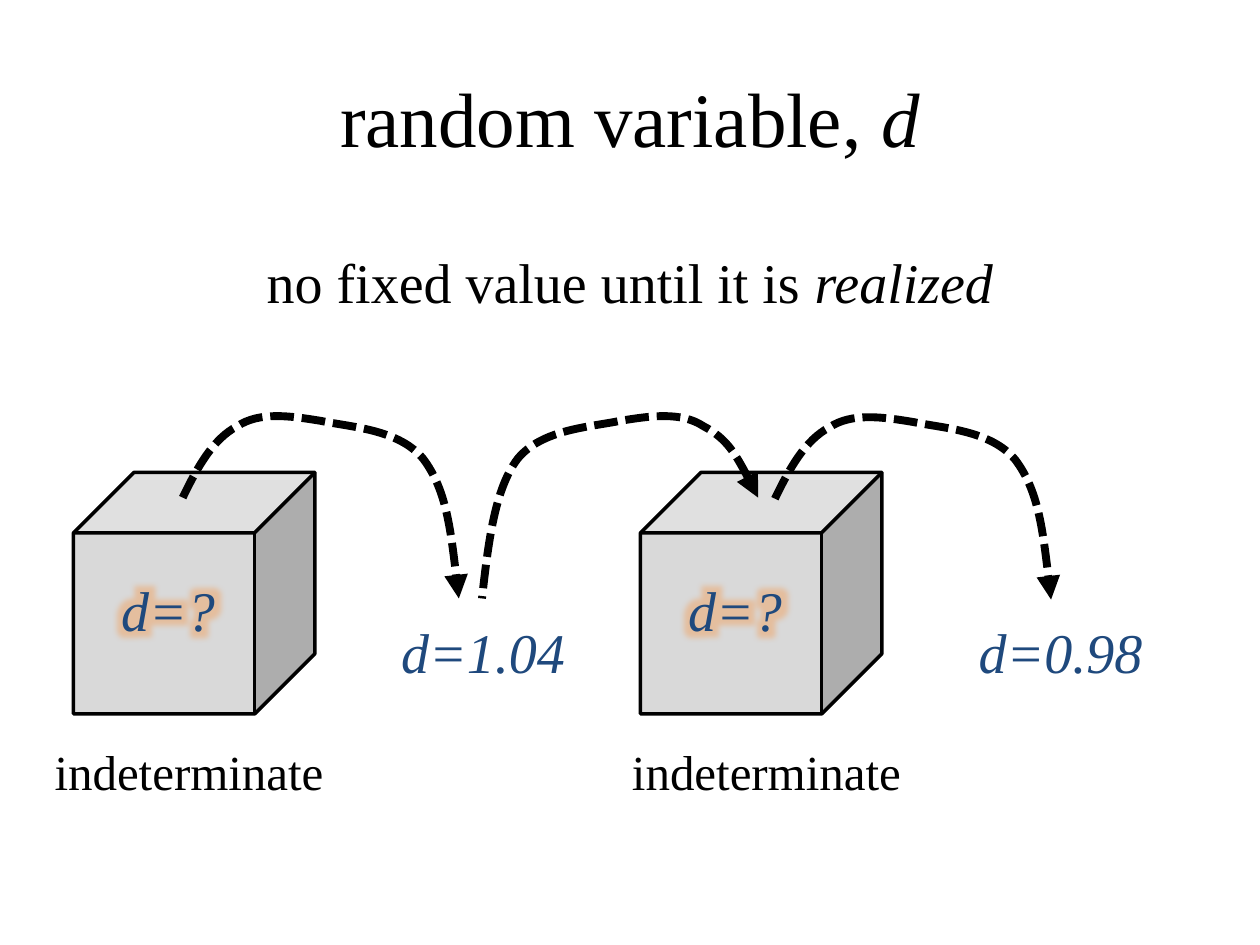
import dataclasses

import lxml.etree
import pptx
import pptx.dml.color
import pptx.enum.dml
import pptx.enum.shapes
import pptx.enum.text
import pptx.oxml.ns
import pptx.util

PX = 914400 // 120
HOP = [
    (14, -29), (29, -56), (52, -68),
    (73, -82), (102, -78), (132, -73),
    (161, -67), (206, -65), (229, -37),
    (251, -8), (257, 43), (263, 96),
]
MIDDLE = pptx.enum.text.MSO_ANCHOR.MIDDLE
TOP = pptx.enum.text.MSO_ANCHOR.TOP


@dataclasses.dataclass(frozen=True)
class Theme:
    font: str = "Times New Roman"
    ink: str = "000000"
    value: str = "1F497D"
    cube: str = "D9D9D9"
    glow: str = "F79646"
    title_size: int = 44
    body_size: int = 32
    caption_size: int = 28
    cube_line: int = 2
    hop_line: float = 4.5


THEME = Theme()


def px(*lengths):
    return [length * PX for length in lengths]


def rgb(color):
    return pptx.dml.color.RGBColor.from_string(color)


def add_xml(parent, tag, **attributes):
    return lxml.etree.SubElement(parent, pptx.oxml.ns.qn(tag), attributes)


def write(box, spans, size, color, anchor, space=0):
    frame = box.text_frame
    frame.word_wrap = True
    frame.vertical_anchor = anchor
    para = frame.paragraphs[0]
    para.alignment = pptx.enum.text.PP_ALIGN.CENTER
    para.space_before = pptx.util.Pt(space)
    para.font.name = THEME.font
    para.font.size = pptx.util.Pt(size)
    para.font.color.rgb = rgb(color)
    for text, italic in spans:
        span = para.add_run()
        span.text = text
        span.font.italic = italic
    return para


def add_title(page, spans):
    title = page.shapes.title
    title.left, title.top, title.width, title.height = px(60, 36, 1080, 150)
    write(title, spans, THEME.title_size, THEME.ink, MIDDLE)


def add_note(page, place, spans, size, space):
    box = page.shapes.add_textbox(*px(*place))
    write(box, spans, size, THEME.ink, TOP, space)


def add_value(page, place, text):
    box = page.shapes.add_textbox(*px(*place))
    return write(box, [(text, True)], THEME.body_size, THEME.value, MIDDLE)


def add_glow(para):
    for span in para.runs:
        effects = add_xml(span.font._element, "a:effectLst")
        glow = add_xml(effects, "a:glow", rad="228600")
        color = add_xml(glow, "a:srgbClr", val=THEME.glow)
        add_xml(color, "a:alpha", val="40000")


def add_cube(page, left):
    cube = page.shapes.add_shape(
        pptx.enum.shapes.MSO_SHAPE.CUBE, *px(left, 450, 230, 230))
    cube.shadow.inherit = False
    cube.fill.solid()
    cube.fill.fore_color.rgb = rgb(THEME.cube)
    cube.line.color.rgb = rgb(THEME.ink)
    cube.line.width = pptx.util.Pt(THEME.cube_line)
    add_glow(add_value(page, (left + 10, 530, 160, 100), "d=?"))


def bend(outline):
    corners = list(outline._element.iter(pptx.oxml.ns.qn("a:lnTo")))
    for first in range(0, len(corners), 3):
        curve = add_xml(corners[first].getparent(), "a:cubicBezTo")
        for corner in corners[first:first + 3]:
            curve.append(corner[0])
            corner.getparent().remove(corner)


def add_hop(page, start_x, start_y, direction, arrow_end):
    builder = page.shapes.build_freeform(start_x, start_y, scale=PX)
    builder.add_line_segments(
        [(start_x + direction * x, start_y + y) for x, y in HOP], close=False)
    hop = builder.convert_to_shape()
    bend(hop)
    hop.shadow.inherit = False
    hop.fill.background()
    hop.line.color.rgb = rgb(THEME.ink)
    hop.line.width = pptx.util.Pt(THEME.hop_line)
    hop.line.dash_style = pptx.enum.dml.MSO_LINE.SQUARE_DOT
    add_xml(hop.line._get_or_add_ln(), arrow_end, type="triangle")


def main():
    deck = pptx.Presentation()
    deck.slide_width, deck.slide_height = px(1200, 900)
    page = deck.slides.add_slide(deck.slide_layouts.get_by_name("Title Only"))

    add_title(page, [("random variable, ", False), ("d", True)])
    add_note(page, (60, 230, 1080, 90),
             [("no fixed value until it is ", False), ("realized", True)],
             THEME.body_size, 4)

    for cube_left, caption_left in ((70, 10), (610, 560)):
        add_cube(page, cube_left)
        add_note(page, (caption_left, 700, 340, 80),
                 [("indeterminate", False)], THEME.caption_size, 3)

    for left, text in ((330, "d=1.04"), (880, "d=0.98")):
        add_value(page, (left, 570, 260, 100), text)

    add_hop(page, 174, 474, 1, "a:tailEnd")
    add_hop(page, 722, 474, -1, "a:headEnd")
    add_hop(page, 738, 475, 1, "a:tailEnd")

    deck.save("out.pptx")


if __name__ == "__main__":
    main()
